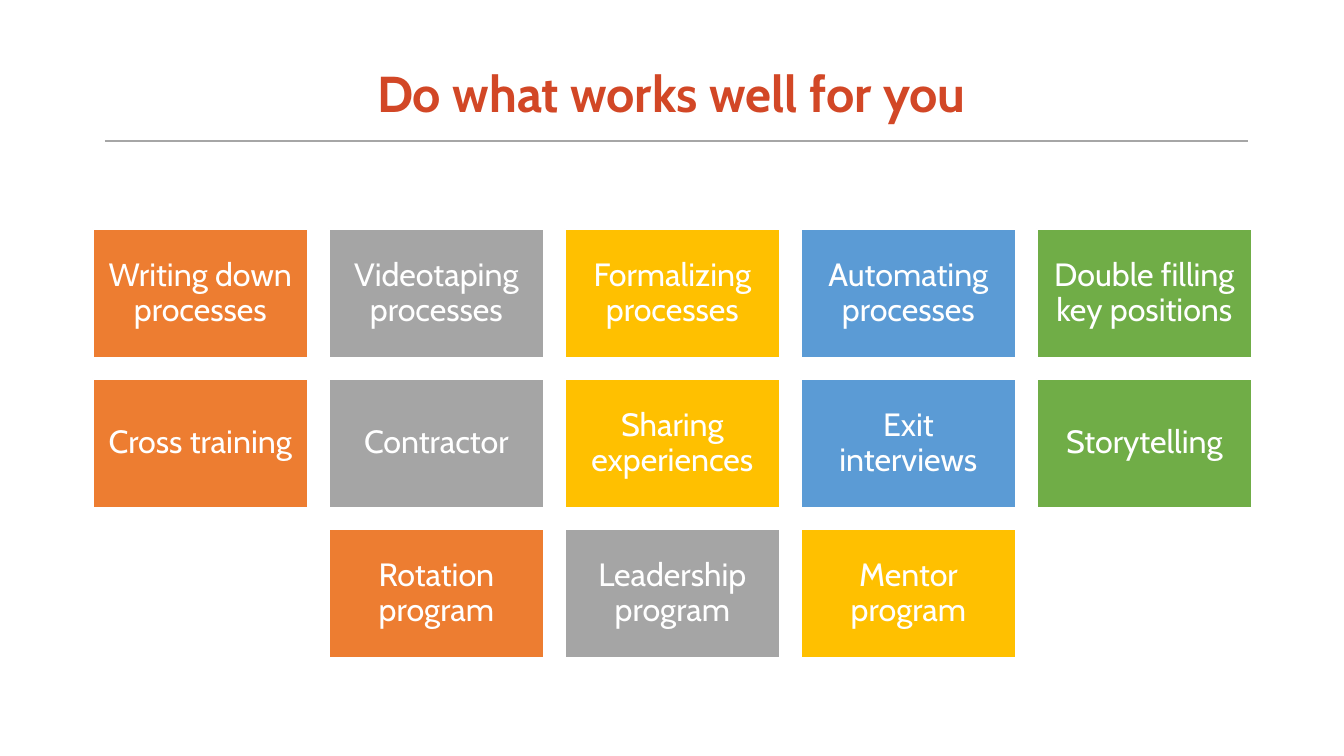
from pptx import Presentation
from pptx.dml.color import RGBColor
from pptx.enum.shapes import MSO_CONNECTOR, MSO_SHAPE
from pptx.enum.text import MSO_ANCHOR, PP_ALIGN
from pptx.util import Pt
from lxml.etree import SubElement
from pptx.oxml.ns import qn

EMU_PER_PX = 914400 / 100.8
FONT = "Cabin"
COLORS = {
    "title": "D24726",
    "rule": "A6A6A6",
    "white": "FFFFFF",
    "orange": "ED7D31",
    "gray": "A5A5A5",
    "gold": "FFC000",
    "blue": "5B9BD5",
    "green": "70AD47",
}
CARD_FILLS = ["orange", "gray", "gold", "blue", "green"]
PRACTICE_ROWS = [
    ["Writing down processes", "Videotaping processes", "Formalizing processes",
     "Automating processes", "Double filling key positions"],
    ["Cross training", "Contractor", "Sharing experiences",
     "Exit interviews", "Storytelling"],
    ["Rotation program", "Leadership program", "Mentor program"],
]
GRID_LEFT, GRID_TOP = 93, 229
CARD_WIDTH, CARD_HEIGHT = 215, 129
COLUMN_STEP, ROW_STEP = 236, 150


def px(length):
    """Turn pixels into EMU."""
    return round(length * EMU_PER_PX)


def color(name):
    """Look up a named colour."""
    return RGBColor.from_string(COLORS[name])


def write_centered(frame, words, size, color_name, bold=False):
    """Write one centred paragraph into a text frame."""
    frame.word_wrap = True
    frame.vertical_anchor = MSO_ANCHOR.MIDDLE
    paragraph = frame.paragraphs[0]
    paragraph.alignment = PP_ALIGN.CENTER
    paragraph.line_spacing = 0.9
    run = paragraph.add_run()
    run.text = words
    run.font.name = FONT
    run.font.size = Pt(size)
    run.font.bold = bold
    run.font.color.rgb = color(color_name)


def add_title(slide, words):
    """Add the slide heading."""
    heading = slide.shapes.add_textbox(px(92), px(51), px(1159), px(91))
    write_centered(heading.text_frame, words, 36, "title", bold=True)


def add_rule(slide, left, right, y):
    """Add the thin line under the heading."""
    rule = slide.shapes.add_connector(
        MSO_CONNECTOR.STRAIGHT, px(left), px(y), px(right), px(y))
    rule.line.color.rgb = color("rule")
    rule.line.width = Pt(1)
    SubElement(rule.line._get_or_add_ln().getparent(), qn("a:effectLst"))


def add_card(slide, left, top, practice, fill_name):
    """Add one coloured practice card."""
    card = slide.shapes.add_shape(
        MSO_SHAPE.RECTANGLE, px(left), px(top), px(CARD_WIDTH), px(CARD_HEIGHT))
    card.shadow.inherit = False
    card.fill.solid()
    card.fill.fore_color.rgb = color(fill_name)
    card.line.color.rgb = color("white")
    card.line.width = Pt(1)
    frame = card.text_frame
    frame.margin_left = frame.margin_right = px(10)
    frame.margin_top = frame.margin_bottom = px(10)
    write_centered(frame, practice, 23, "white")


def add_practice_grid(slide):
    """Add the rows of cards, each row centred on the widest."""
    for row, practices in enumerate(PRACTICE_ROWS):
        indent = (len(CARD_FILLS) - len(practices)) * COLUMN_STEP // 2
        top = GRID_TOP + row * ROW_STEP
        for column, (practice, fill_name) in enumerate(zip(practices, CARD_FILLS)):
            left = GRID_LEFT + indent + column * COLUMN_STEP
            add_card(slide, left, top, practice, fill_name)


def main():
    """Build and save the slide."""
    deck = Presentation()
    deck.slide_width, deck.slide_height = px(1344), px(756)
    slide = deck.slides.add_slide(deck.slide_layouts[6])
    add_rule(slide, 105, 1248, 141)
    add_title(slide, "Do what works well for you")
    add_practice_grid(slide)
    deck.save("out.pptx")


if __name__ == "__main__":
    main()
